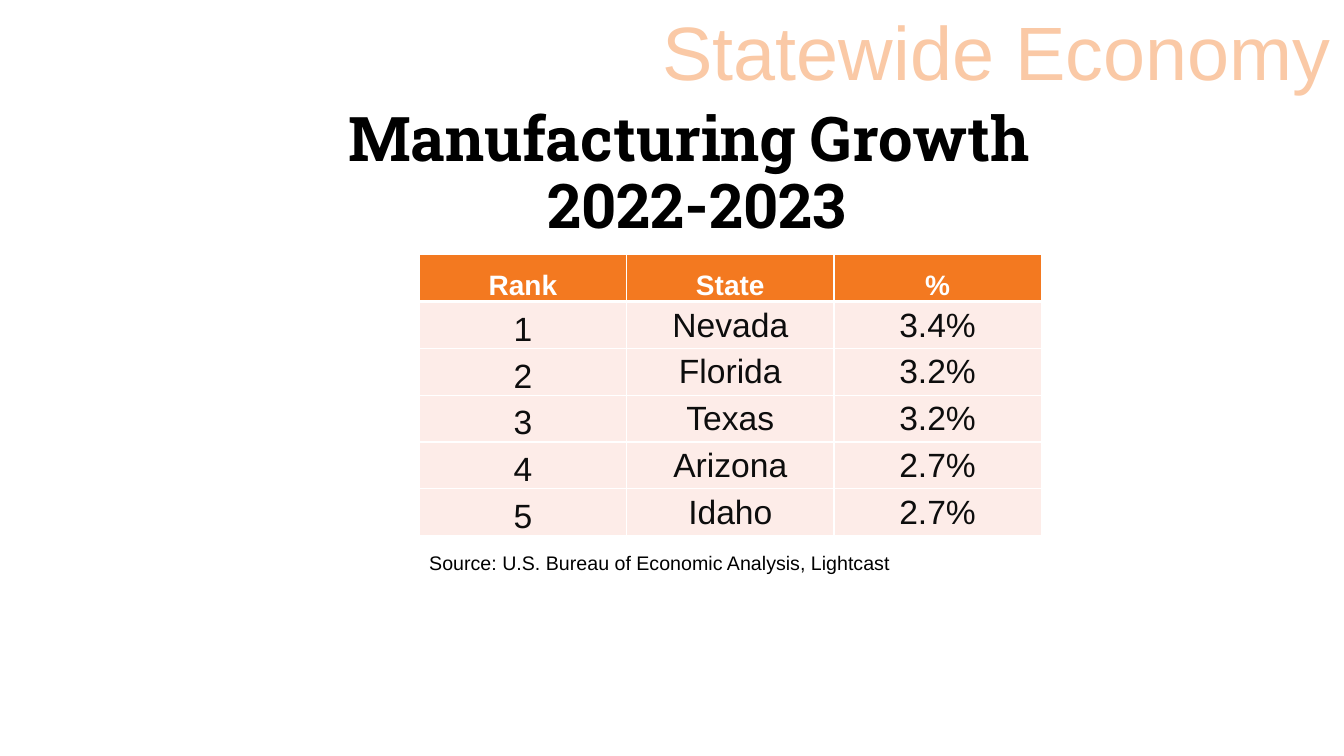
from dataclasses import dataclass

from lxml import etree
from pptx import Presentation
from pptx.dml.color import RGBColor
from pptx.enum import text
from pptx.oxml import ns
from pptx.util import Pt

COLORS = {
    "black": "000000",
    "ink": "0D0D0D",
    "white": "FFFFFF",
    "orange": "F37920",
    "peach": "FAC9A6",
    "blush": "FDECE8",
}
CENTER = text.PP_ALIGN.CENTER
MIDDLE, BOTTOM = text.MSO_ANCHOR.MIDDLE, text.MSO_ANCHOR.BOTTOM


@dataclass
class Label:
    words: str
    box: tuple[float, float, float, float]
    style: dict
    wrap: bool = True
    anchor: text.MSO_ANCHOR = text.MSO_ANCHOR.TOP


LABELS = [
    Label("Manufacturing Growth \v2022-2023", (76.3, 77, 843.1, 96.5),
          dict(size=44, font="Roboto Slab", bold=True, align=CENTER, space=0.9),
          anchor=MIDDLE),
    Label("Statewide Economy", (463.7, 0, 496.1, 72.7),
          dict(size=54, color="peach", align=CENTER), wrap=False),
    Label("Source: U.S. Bureau of Economic Analysis, Lightcast",
          (299.5, 390.2, 561.6, 24.5), dict(size=14)),
]

ROWS = [
    ("Rank", "State", "%"),
    ("1", "Nevada", "3.4%"),
    ("2", "Florida", "3.2%"),
    ("3", "Texas", "3.2%"),
    ("4", "Arizona", "2.7%"),
    ("5", "Idaho", "2.7%"),
]
LEFT, TOP, COL, ROW = 299.5, 181.8, 148.1, 33.5


def write(frame, words: str, *, size: float, font: str = "Arial",
          color: str = "black", bold: bool = False,
          align=text.PP_ALIGN.LEFT, space: float = 1) -> None:
    frame.text = words
    para = frame.paragraphs[0]
    para.alignment = align
    para.line_spacing = space
    for run in para.runs:
        run.font.size = Pt(size)
        run.font.name = font
        run.font.bold = bold
        run.font.color.rgb = RGBColor.from_string(COLORS[color])


def add_label(slide, label: Label) -> None:
    frame = slide.shapes.add_textbox(*map(Pt, label.box)).text_frame
    frame.word_wrap = label.wrap
    frame.vertical_anchor = label.anchor
    write(frame, label.words, **label.style)


def edge(cell, side: str, width: float) -> None:
    """Add a white border; call before the cell's fill is set."""
    props = cell._tc.get_or_add_tcPr()
    line = etree.SubElement(props, ns.qn(f"a:ln{side}"), w=str(Pt(width)))
    fill = etree.SubElement(line, ns.qn("a:solidFill"))
    etree.SubElement(fill, ns.qn("a:srgbClr"), val=COLORS["white"])


def style_cell(cell, words: str, row: int, col: int) -> None:
    head = row == 0
    inset = Pt(0 if head else 0.7)
    cell.margin_left = cell.margin_right = cell.margin_top = inset
    cell.margin_bottom = 0
    cell.vertical_anchor = BOTTOM if head or col == 0 else MIDDLE
    widths = {"L": 1, "R": 1, "T": 3 if row == 1 else 1, "B": 3 if head else 1}
    for side, width in widths.items():
        edge(cell, side, width)
    cell.fill.solid()
    tint = "orange" if head else "blush"
    cell.fill.fore_color.rgb = RGBColor.from_string(COLORS[tint])
    write(cell.text_frame, words, size=20 if head else 24, bold=head,
          color="white" if head else "ink", align=CENTER)


def add_ranks(slide) -> None:
    count, cols = len(ROWS), len(ROWS[0])
    table = slide.shapes.add_table(
        count, cols, Pt(LEFT), Pt(TOP), Pt(COL * cols), Pt(ROW * count)).table
    table.horz_banding = False
    for col in table.columns:
        col.width = Pt(COL)
    for r, words in enumerate(ROWS):
        table.rows[r].height = Pt(ROW)
        for c, word in enumerate(words):
            style_cell(table.cell(r, c), word, r, c)


def main() -> None:
    deck = Presentation()
    deck.slide_width, deck.slide_height = Pt(960), Pt(540)
    slide = deck.slides.add_slide(deck.slide_layouts[6])
    title, *others = LABELS
    add_label(slide, title)
    add_ranks(slide)
    for label in others:
        add_label(slide, label)
    deck.save("out.pptx")


if __name__ == "__main__":
    main()
